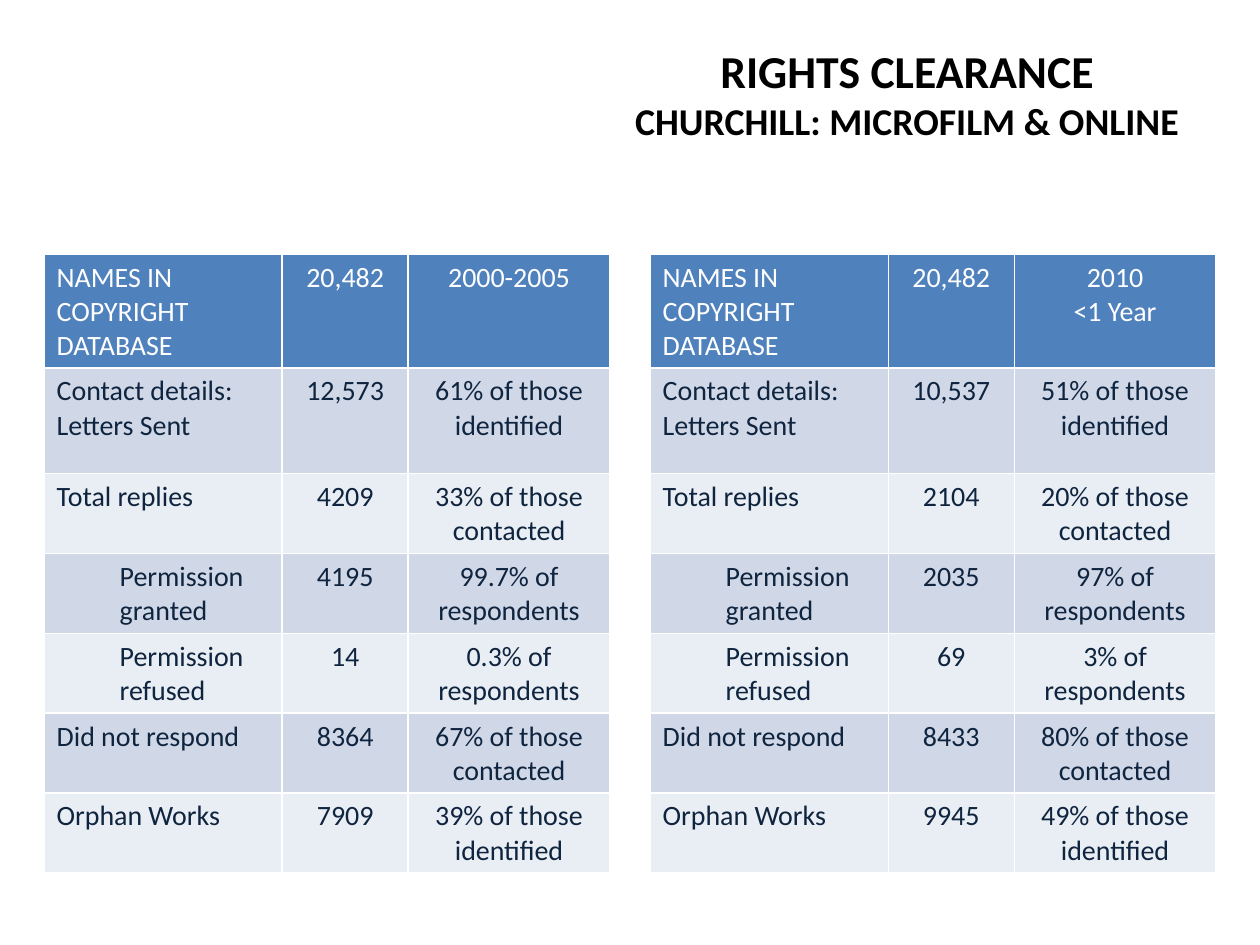
from pptx import Presentation
from pptx import util as u
from pptx.dml.color import RGBColor
from pptx.enum import text

HUES = {"black": "000000", "white": "FFFFFF", "navy": "0F243E",
        "head": "4F81BD", "odd": "D0D8E8", "even": "E9EDF4"}
LABELS = ["NAMES IN COPYRIGHT DATABASE", "Contact details: Letters Sent",
          "Total replies", "Permission granted", "Permission refused",
          "Did not respond", "Orphan Works"]
NESTED = LABELS[3:5]
BASES = ["identified", "contacted", "respondents", "respondents",
         "contacted", "identified"]
WIDTHS = [1.89, 1, 1.6]
HEIGHTS = [0.9, 0.84] + [0.63] * 5
STUDIES = [
    ("2000-2005",
     ["20,482", "12,573", "4209", "4195", "14", "8364", "7909"],
     ["61%", "33%", "99.7%", "0.3%", "67%", "39%"]),
    ("2010\n<1 Year",
     ["20,482", "10,537", "2104", "2035", "69", "8433", "9945"],
     ["51%", "20%", "97%", "3%", "80%", "49%"]),
]


class Deck:
    font = "Calibri"
    size = 16

    def __init__(self, wide, high):
        self.show = Presentation()
        self.show.slide_width = u.Inches(wide)
        self.show.slide_height = u.Inches(high)
        self.slide = self.show.slides.add_slide(self.show.slide_layouts[6])

    def style(self, run, size, hue, bold=False):
        run.font.name = self.font
        run.font.size = u.Pt(size)
        run.font.bold = bold
        run.font.color.rgb = RGBColor.from_string(HUES[hue])

    def title(self, lines, sizes, box):
        frame = self.slide.shapes.add_textbox(*map(u.Inches, box)).text_frame
        frame.word_wrap = True
        frame.vertical_anchor = text.MSO_ANCHOR.MIDDLE
        para = frame.paragraphs[0]
        para.text = "\v".join(lines)
        para.alignment = text.PP_ALIGN.CENTER
        for run, size in zip(para.runs, sizes):
            self.style(run, size, "black", True)

    def cell(self, cell, words, fill, hue, mid):
        cell.fill.solid()
        cell.fill.fore_color.rgb = RGBColor.from_string(HUES[fill])
        cell.text_frame.text = words
        for para in cell.text_frame.paragraphs:
            if mid:
                para.alignment = text.PP_ALIGN.CENTER
            if words in NESTED:
                para.level = 1
            for run in para.runs:
                self.style(run, self.size, hue, False)

    def table(self, left, top, rows):
        box = (left, top, sum(WIDTHS), sum(HEIGHTS))
        grid = self.slide.shapes.add_table(
            len(rows), len(WIDTHS), *map(u.Inches, box)).table
        for col, wide in zip(grid.columns, WIDTHS):
            col.width = u.Inches(wide)
        for r, (row, high) in enumerate(zip(rows, HEIGHTS)):
            grid.rows[r].height = u.Inches(high)
            fill = "head" if r == 0 else "odd" if r % 2 else "even"
            hue = "white" if r == 0 else "navy"
            for c, words in enumerate(row):
                self.cell(grid.cell(r, c), words, fill, hue, c > 0)


def main():
    deck = Deck(10, 7.5)
    deck.title(["RIGHTS CLEARANCE", "CHURCHILL: MICROFILM & ONLINE"],
               [26.1, 21.6], (2.95, 0.28, 8.5, 0.92))
    for i, (span, counts, shares) in enumerate(STUDIES):
        joins = [" of " if base == "respondents" else " of those "
                 for base in BASES]
        notes = [span] + [a + b + c for a, b, c in zip(shares, joins, BASES)]
        deck.table(0.35 + i * 4.81, 2.02, list(zip(LABELS, counts, notes)))
    deck.show.save("out.pptx")


if __name__ == "__main__":
    main()
